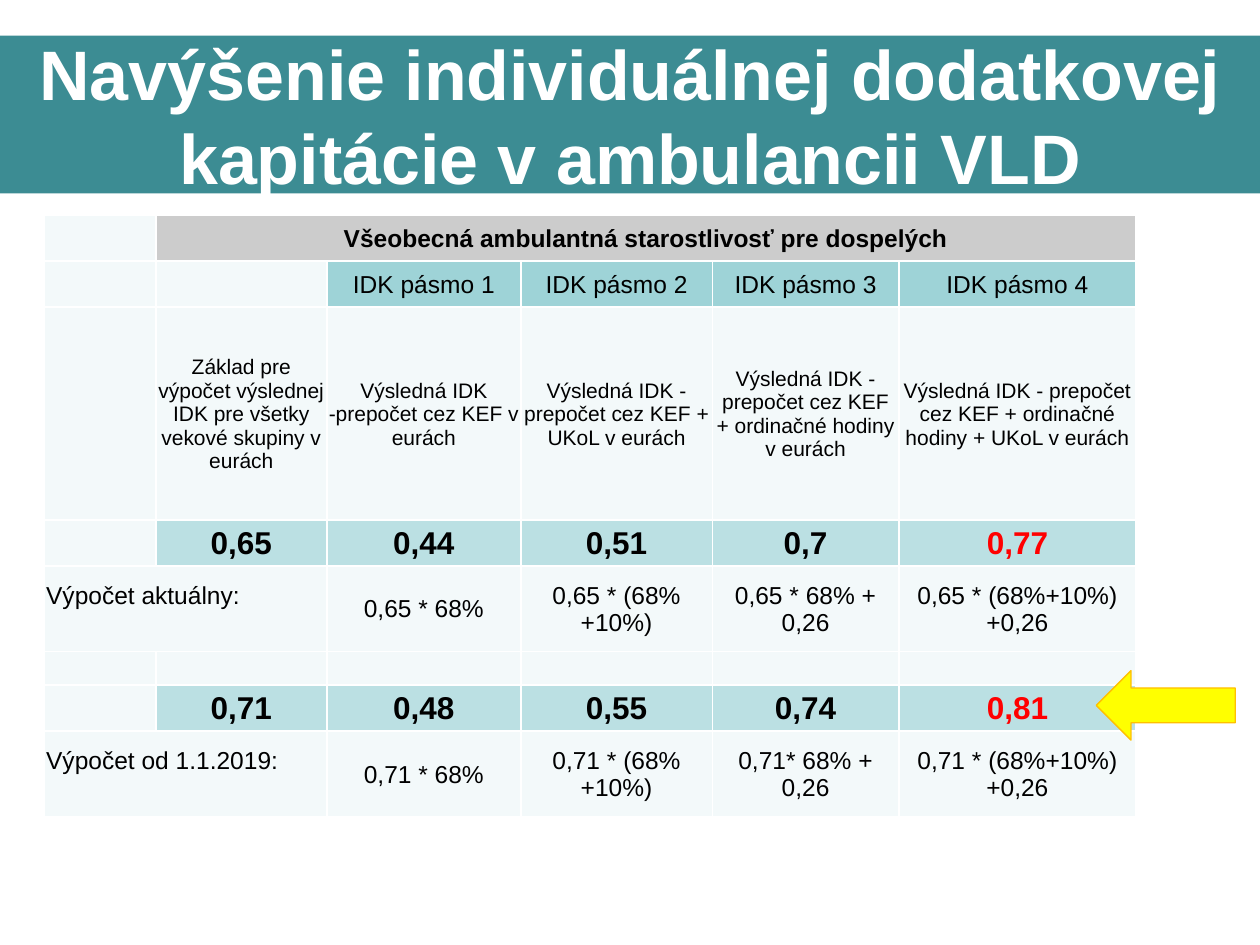
import lxml.etree
import pptx
import pptx.dml.color
import pptx.enum.shapes
import pptx.enum.text
import pptx.oxml.ns
import pptx.util

Cm = pptx.util.Cm
Pt = pptx.util.Pt
RGBColor = pptx.dml.color.RGBColor
Align = pptx.enum.text.PP_ALIGN
Anchor = pptx.enum.text.MSO_ANCHOR
Preset = pptx.enum.shapes.MSO_SHAPE
qn = pptx.oxml.ns.qn

TEAL = RGBColor(0x3C, 0x8C, 0x93)
AQUA = RGBColor(0x9E, 0xD3, 0xD7)
LIGHT_AQUA = RGBColor(0xBB, 0xE0, 0xE3)
PALE = RGBColor(0xF3, 0xF9, 0xFA)
GRAY = RGBColor(0xCC, 0xCC, 0xCC)
WHITE = RGBColor(0xFF, 0xFF, 0xFF)
BLACK = RGBColor(0x00, 0x00, 0x00)
RED = RGBColor(0xFF, 0x00, 0x00)
YELLOW = RGBColor(0xFF, 0xFF, 0x00)
AMBER = RGBColor(0xFF, 0xC0, 0x00)

COLUMN_WIDTHS = [2.24, 3.45, 3.91, 3.86, 3.76, 4.78]
CELL_FORMAT = {
    "vertical_anchor": Anchor.MIDDLE,
    "margin_left": Cm(0.03),
    "margin_right": Cm(0.03),
    "margin_top": Cm(0.03),
    "margin_bottom": Cm(0),
}
ROW_KINDS = {
    "heading": {"height": 0.93, "fill": GRAY, "size": 14, "bold": True},
    "band": {"height": 0.93, "fill": AQUA, "size": 14, "bold": False},
    "method": {"height": 4.29, "fill": PALE, "size": 12, "bold": False},
    "result": {"height": 0.93, "fill": LIGHT_AQUA, "size": 18, "bold": True},
    "formula": {"height": 1.72, "fill": PALE, "size": 14, "bold": False},
    "gap": {"height": 0.68, "fill": PALE, "size": 12, "bold": False},
}
ROWS = [
    ("heading", ["", "Všeobecná ambulantná starostlivosť pre dospelých", "", "", "", ""]),
    ("band", ["", ""] + [f"IDK pásmo {number}" for number in range(1, 5)]),
    ("method", [
        "",
        "Základ pre výpočet výslednej IDK pre všetky vekové skupiny v eurách",
        "Výsledná IDK -prepočet cez KEF v eurách",
        "Výsledná IDK - prepočet cez KEF + UKoL v eurách",
        "Výsledná IDK - prepočet cez KEF + ordinačné hodiny v eurách",
        "Výsledná IDK - prepočet cez KEF + ordinačné hodiny + UKoL v eurách",
    ]),
    ("result", ["", "0,65", "0,44", "0,51", "0,7", "0,77"]),
    ("formula", ["Výpočet aktuálny:", "", "0,65 * 68%", "0,65 * (68%+10%)",
                 "0,65 * 68% + 0,26", "0,65 * (68%+10%)+0,26"]),
    ("gap", [""] * 6),
    ("result", ["", "0,71", "0,48", "0,55", "0,74", "0,81"]),
    ("formula", ["Výpočet od 1.1.2019:", "", "0,71 * 68%", "0,71 * (68%+10%)",
                 "0,71* 68% + 0,26", "0,71 * (68%+10%)+0,26"]),
]


def apply(target, values):
    for name, value in values.items():
        setattr(target, name, value)


def write(para, text, size, bold, color, align):
    para.alignment = align
    span = para.add_run()
    span.text = text
    apply(span.font, {"name": "Arial", "size": Pt(size), "bold": bold})
    span.font.color.rgb = color


def add_filled(page, preset, box, fill):
    shape = page.shapes.add_shape(preset, *box)
    shape.shadow.inherit = False
    shape.fill.solid()
    shape.fill.fore_color.rgb = fill
    return shape


def add_title(page, box):
    banner = add_filled(page, Preset.RECTANGLE, box, TEAL)
    banner.line.fill.background()
    frame = banner.text_frame
    apply(frame, {"word_wrap": True, "vertical_anchor": Anchor.MIDDLE})
    write(frame.paragraphs[0],
          "Navýšenie individuálnej dodatkovej kapitácie v ambulancii VLD",
          40, True, WHITE, Align.CENTER)


def add_borders(cell):
    properties = cell._tc.get_or_add_tcPr()
    for side in ("a:lnL", "a:lnR", "a:lnT", "a:lnB"):
        line = lxml.etree.SubElement(properties, qn(side), w=str(Pt(1)))
        fill = lxml.etree.SubElement(line, qn("a:solidFill"))
        lxml.etree.SubElement(fill, qn("a:srgbClr"), val=str(WHITE))


def fill_cell(cell, text, kind, column):
    apply(cell, CELL_FORMAT)
    add_borders(cell)
    cell.fill.solid()
    cell.fill.fore_color.rgb = kind["fill"] if text else PALE
    para = cell.text_frame.paragraphs[0]
    if not text:
        lxml.etree.SubElement(para._p, qn("a:endParaRPr"), sz=str(kind["size"] * 100))
        return
    is_label = column == 0
    if is_label:
        cell.margin_bottom = Cm(0.55)
    is_top_result = kind is ROW_KINDS["result"] and column == len(COLUMN_WIDTHS) - 1
    write(para, text, kind["size"], kind["bold"], RED if is_top_result else BLACK,
          Align.LEFT if is_label else Align.CENTER)


def add_capitation_table(page, left, top):
    heights = [ROW_KINDS[name]["height"] for name, texts in ROWS]
    table = page.shapes.add_table(
        len(ROWS), len(COLUMN_WIDTHS), left, top,
        Cm(sum(COLUMN_WIDTHS)), Cm(sum(heights))).table
    apply(table, {"first_row": False, "horz_banding": False})
    for column, width in zip(table.columns, COLUMN_WIDTHS):
        column.width = Cm(width)
    for row, height in zip(table.rows, heights):
        row.height = Cm(height)
    for row, (name, texts) in enumerate(ROWS):
        for column, text in enumerate(texts):
            fill_cell(table.cell(row, column), text, ROW_KINDS[name], column)
        if name == "heading":
            table.cell(row, 1).merge(table.cell(row, 5))
        elif name == "formula":
            table.cell(row, 0).merge(table.cell(row, 1))


def add_result_arrow(page, box):
    arrow = add_filled(page, Preset.LEFT_ARROW, box, YELLOW)
    arrow.line.color.rgb = AMBER
    arrow.line.width = Pt(0.75)


def main():
    deck = pptx.Presentation()
    apply(deck, {"slide_width": Cm(25.4), "slide_height": Cm(19.05)})
    page = deck.slides.add_slide(deck.slide_layouts[6])
    add_title(page, (Cm(0), Cm(0.72), deck.slide_width, Cm(3.18)))
    add_capitation_table(page, Cm(0.9), Cm(4.33))
    add_result_arrow(page, (Cm(22.1), Cm(13.52), Cm(2.8), Cm(1.4)))
    deck.save("out.pptx")


if __name__ == "__main__":
    main()
